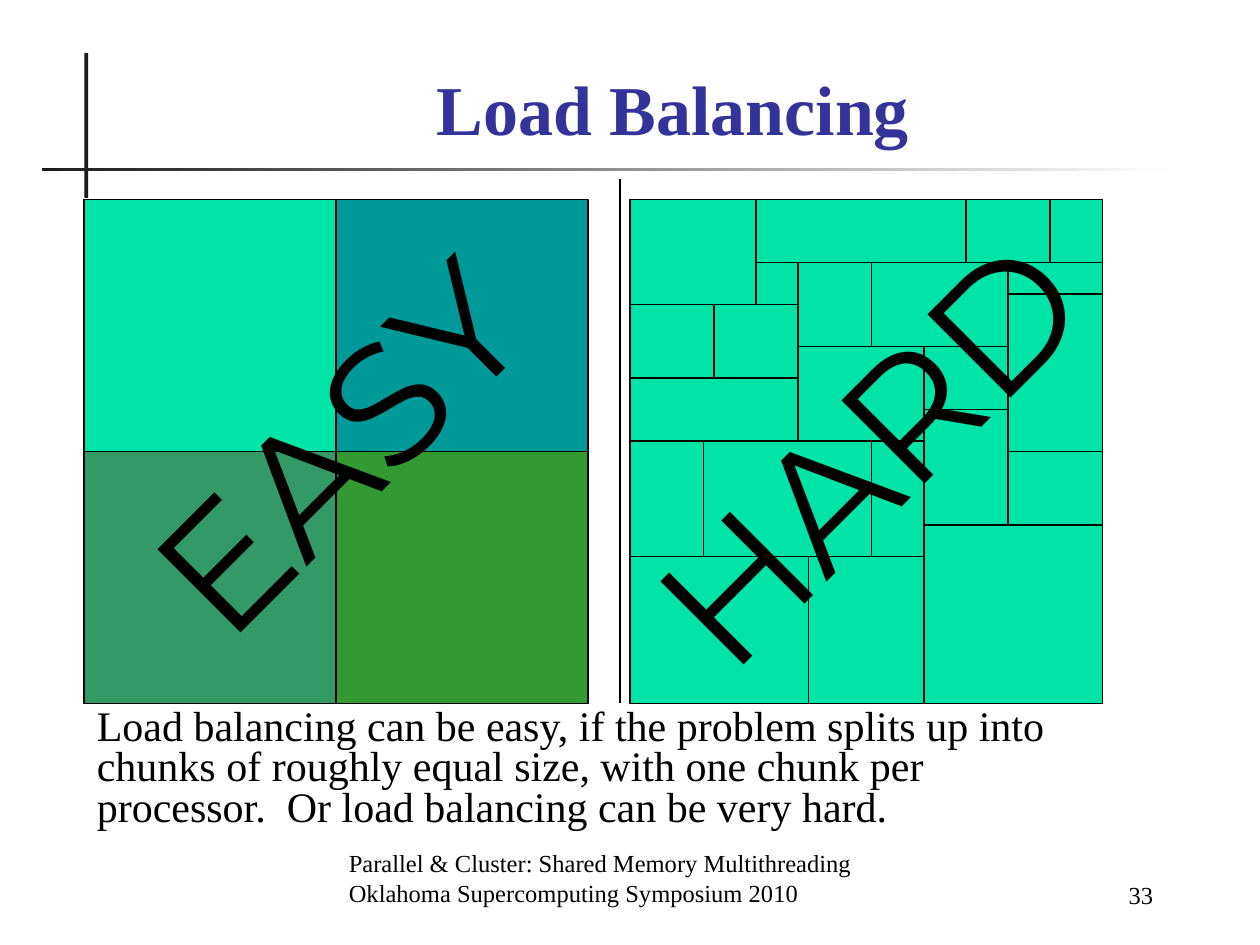
from lxml import etree
from pptx import Presentation
from pptx.dml.color import RGBColor
from pptx.enum.shapes import MSO_CONNECTOR, MSO_SHAPE
from pptx.enum.text import MSO_ANCHOR, PP_ALIGN
from pptx.oxml.ns import qn
from pptx.util import Inches, Pt

RECTANGLE = MSO_SHAPE.RECTANGLE
STRAIGHT = MSO_CONNECTOR.STRAIGHT
TOP, BOTTOM = MSO_ANCHOR.TOP, MSO_ANCHOR.BOTTOM
LEFT, CENTER, RIGHT = PP_ALIGN.LEFT, PP_ALIGN.CENTER, PP_ALIGN.RIGHT

SERIF, DISPLAY = "Times New Roman", "Montserrat"
BLACK, WHITE, RULE, BLUE, MINT = "000000", "FFFFFF", "1C1C1C", "333399", "00E4A8"

TITLE = "Load Balancing"
BODY = ("Load balancing can be easy, if the problem splits up into chunks of "
        "roughly equal size, with one chunk per processor.  "
        "Or load balancing can be very hard.")
FOOTER = ["Parallel & Cluster: Shared Memory Multithreading",
          "Oklahoma Supercomputing Symposium 2010"]
PAGE_NUMBER = "33"
WORDS = [("EASY", (0.5, 2.67, 4.33, 1.7)), ("HARD", (4.65, 2.71, 4.44, 1.7))]

UNIT = 1 / 12
PANEL_TOP = 19 * UNIT
EASY_LEFT, HARD_LEFT = 8 * UNIT, 5
EASY_SIDE = 24
EASY_COLORS = [[MINT, "009999"], ["339966", "339933"]]
HARD_CHUNKS = [
    (0, 0, 12, 10), (12, 0, 20, 6), (32, 0, 8, 6), (40, 0, 5, 6),
    (12, 6, 4, 4), (16, 6, 7, 8), (23, 6, 13, 8), (36, 6, 9, 3),
    (0, 10, 8, 7), (8, 10, 8, 7), (36, 9, 9, 15), (16, 14, 12, 9),
    (28, 14, 8, 6), (0, 17, 16, 6), (28, 20, 8, 11), (0, 23, 7, 11),
    (7, 23, 16, 11), (23, 23, 5, 11), (36, 24, 9, 7), (28, 31, 17, 17),
    (0, 34, 17, 14), (17, 34, 11, 14),
]


def color(value):
    return RGBColor.from_string(value)


def place(shape, area):
    shape.left, shape.top, shape.width, shape.height = map(Inches, area)


def write(box, lines, size=14, font=SERIF, ink=BLACK, bold=False,
          align=LEFT, anchor=TOP, spacing=None):
    frame = box.text_frame
    frame.word_wrap = True
    frame.vertical_anchor = anchor
    for index, line in enumerate(lines):
        para = frame.add_paragraph() if index else frame.paragraphs[0]
        para.alignment = align
        para.line_spacing = spacing
        span = para.add_run()
        span.text = line
        span.font.name = font
        span.font.size = Pt(size)
        span.font.bold = bold
        span.font.color.rgb = color(ink)


def add_text(page, area, lines, **style):
    box = page.shapes.add_textbox(*map(Inches, area))
    write(box, lines, **style)
    return box


def add_block(page, area, fill, outline=None):
    block = page.shapes.add_shape(RECTANGLE, *map(Inches, area))
    block.shadow.inherit = False
    block.fill.solid()
    block.fill.fore_color.rgb = color(fill)
    if outline:
        block.line.color.rgb = color(outline)
        block.line.width = Pt(0.75)
    else:
        block.line.fill.background()
    return block


def add_chunk(page, panel_left, chunk, fill):
    x, y, width, height = (value * UNIT for value in chunk)
    add_block(page, (panel_left + x, PANEL_TOP + y, width, height), fill, BLACK)


def add_rules(page):
    add_block(page, (0.67, 0.42, 0.03, 1.15), RULE)
    fade = add_block(page, (0.33, 1.33, 9, 0.03), RULE).fill
    fade.gradient()
    fade.gradient_angle = 0
    for stop, shade in zip(fade.gradient_stops, (RULE, WHITE)):
        stop.color.rgb = color(shade)


def add_divider(page):
    divider = page.shapes.add_connector(
        STRAIGHT, *map(Inches, (4.92, 1.42, 4.92, 5.58)))
    divider.line.color.rgb = color(BLACK)
    divider.line.width = Pt(0.75)
    etree.SubElement(divider.element.spPr, qn("a:effectLst"))


def main():
    deck = Presentation()
    deck.slide_width, deck.slide_height = Inches(10), Inches(7.5)
    page = deck.slides.add_slide(deck.slide_layouts[5])

    add_rules(page)
    place(page.shapes.title, (1.08, 0.5, 8.52, 0.74))
    write(page.shapes.title, [TITLE], size=40, ink=BLUE, bold=True,
          align=CENTER, anchor=BOTTOM)
    add_text(page, (2.67, 6.75, 4.37, 0.5), FOOTER, anchor=BOTTOM)
    add_text(page, (7.83, 6.77, 1.42, 0.5), [PAGE_NUMBER], align=RIGHT, anchor=BOTTOM)

    for row, fills in enumerate(EASY_COLORS):
        for column, fill in enumerate(fills):
            chunk = (column * EASY_SIDE, row * EASY_SIDE, EASY_SIDE, EASY_SIDE)
            add_chunk(page, EASY_LEFT, chunk, fill)
    add_divider(page)
    for chunk in HARD_CHUNKS:
        add_chunk(page, HARD_LEFT, chunk, MINT)

    add_text(page, (0.67, 5.58, 8.17, 1.06), [BODY], size=24, spacing=0.8)
    for word, area in WORDS:
        box = add_text(page, area, [word], size=96, font=DISPLAY, align=CENTER)
        box.rotation = 315

    deck.save("out.pptx")


if __name__ == "__main__":
    main()
